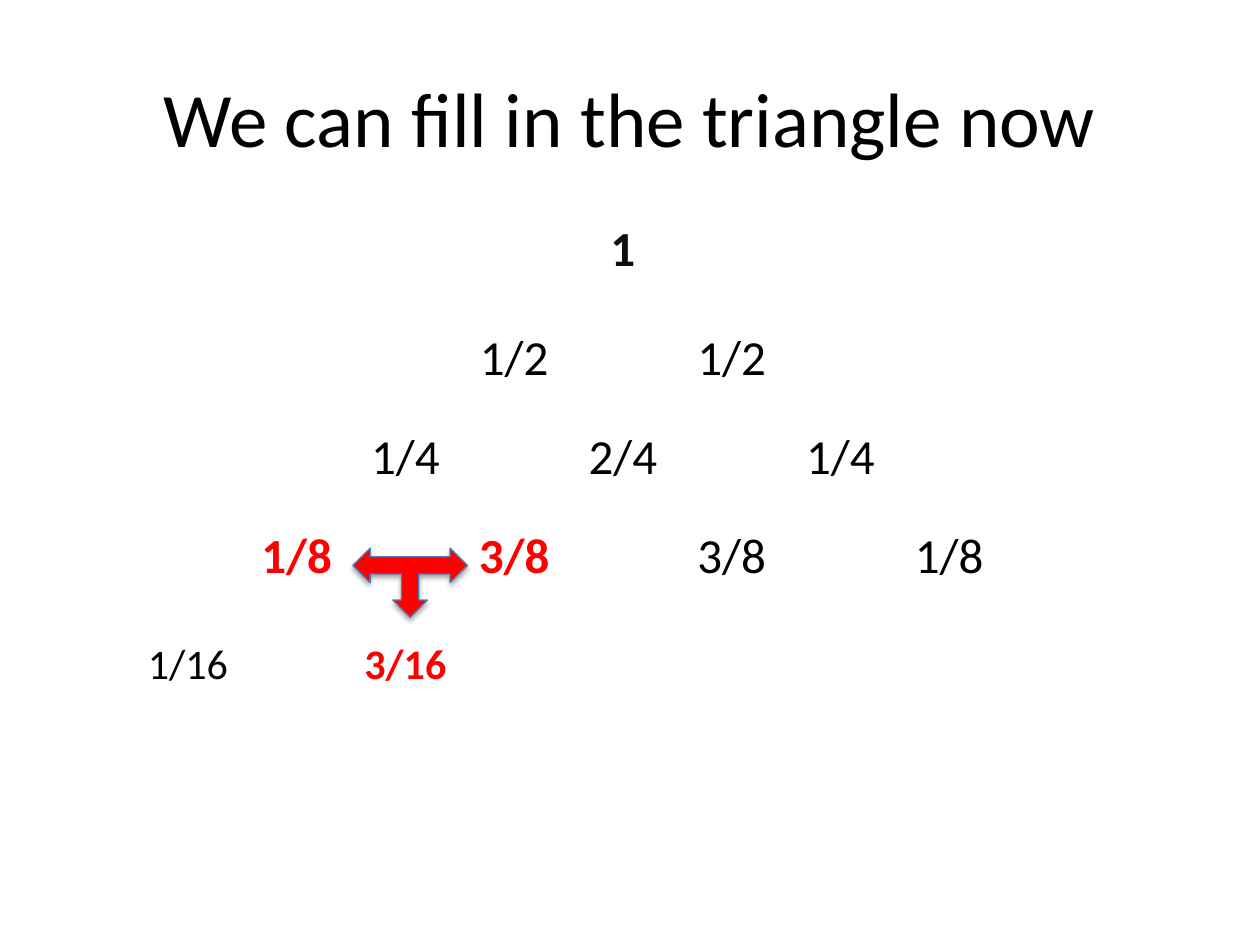
from lxml import etree
from pptx import Presentation
from pptx.dml.color import RGBColor
from pptx.enum.shapes import MSO_SHAPE
from pptx.enum.text import MSO_ANCHOR, PP_ALIGN
from pptx.oxml import parse_xml
from pptx.oxml.ns import nsdecls, qn
from pptx.util import Pt

CENTER = PP_ALIGN.CENTER
MIDDLE = MSO_ANCHOR.MIDDLE
THREE_WAY_ARROW = MSO_SHAPE.LEFT_RIGHT_UP_ARROW

FONT = "Calibri"
WHITE = RGBColor(0xFF, 0xFF, 0xFF)
BLACK = RGBColor(0x00, 0x00, 0x00)
NEAR_BLACK = RGBColor(0x0D, 0x0D, 0x0D)
RED = RGBColor(0xFF, 0x00, 0x00)
BLUE = RGBColor(0x4B, 0x7E, 0xBC)

TRIANGLE = [
    ["1"],
    ["1/2", "1/2"],
    ["1/4", "2/4", "1/4"],
    ["1/8", "3/8", "3/8", "1/8"],
    ["1/16", "3/16"],
]
HIGHLIGHTED = {(3, 0), (3, 1), (4, 1)}  # (row, place in row)
COLUMN_COUNT = 2 * len(TRIANGLE) - 1
COLUMN_WIDTH = 62.16
ROW_HEIGHTS = [62.4, 62.4, 50.4, 62.4, 62.4]


def write(frame, text, size, color, bold=False):
    """Put one centred line of text in a frame."""
    frame.text = text
    para = frame.paragraphs[0]
    para.alignment = CENTER
    font = para.runs[0].font
    font.name, font.size, font.bold = FONT, Pt(size), bold
    font.color.rgb = color


def add_title(page, text):
    title = page.shapes.title
    title.left, title.top = Pt(36), Pt(21.6)
    title.width, title.height = Pt(648), Pt(90)
    title.text_frame.vertical_anchor = MIDDLE
    write(title.text_frame, text, 44, BLACK)


def set_borders(cell, bottom_width):
    """Draw white lines on all four sides of a cell."""
    properties = cell._tc.get_or_add_tcPr()
    sides = {"a:lnL": 1, "a:lnR": 1, "a:lnT": 1, "a:lnB": bottom_width}
    for place, (side, width) in enumerate(sides.items()):
        line = etree.Element(qn(side), w=str(Pt(width)))
        fill = etree.SubElement(line, qn("a:solidFill"))
        etree.SubElement(fill, qn("a:srgbClr"), val=str(WHITE))
        properties.insert(place, line)


def add_triangle(page):
    row_count = len(TRIANGLE)
    table = page.shapes.add_table(
        row_count, COLUMN_COUNT, Pt(76.32), Pt(111.6),
        Pt(COLUMN_WIDTH * COLUMN_COUNT), Pt(sum(ROW_HEIGHTS))).table
    for column in table.columns:
        column.width = Pt(COLUMN_WIDTH)
    for row, height in zip(table.rows, ROW_HEIGHTS):
        row.height = Pt(height)

    # White grid, with a heavier line under the first row
    for row_index, row in enumerate(table.rows):
        for cell in row.cells:
            cell.fill.solid()
            cell.fill.fore_color.rgb = WHITE
            cell.vertical_anchor = MIDDLE
            set_borders(cell, 3 if row_index == 0 else 1)

    # Each row starts one column further left and uses every second column
    for row_index, values in enumerate(TRIANGLE):
        first_column = row_count - 1 - row_index
        size = 24 if row_index == row_count - 1 else 28
        for place, value in enumerate(values):
            marked = (row_index, place) in HIGHLIGHTED
            apex = row_index == 0
            color = RED if marked else NEAR_BLACK if apex else BLACK
            cell = table.cell(row_index, first_column + 2 * place)
            write(cell.text_frame, value, size, color, marked or apex)


def add_sum_arrow(page):
    """Arrow from the two added fractions down to their sum."""
    arrow = page.shapes.add_shape(
        THREE_WAY_ARROW, Pt(201.6), Pt(313.2), Pt(65.52), Pt(39.6))
    arrow.fill.solid()
    arrow.fill.fore_color.rgb = RED
    arrow.line.color.rgb = BLUE
    arrow.line.width = Pt(0.75)
    properties = arrow._element.spPr
    properties.find(qn("a:xfrm")).set("flipV", "1")
    properties.append(parse_xml(
        f'<a:effectLst {nsdecls("a")}>'
        f'<a:outerShdw blurRad="{Pt(3.1)}" dist="{Pt(1.8)}" dir="5400000" '
        'rotWithShape="0"><a:srgbClr val="000000"><a:alpha val="35000"/>'
        '</a:srgbClr></a:outerShdw></a:effectLst>'))


def main():
    deck = Presentation()
    deck.slide_width, deck.slide_height = Pt(720), Pt(540)
    page = deck.slides.add_slide(deck.slide_layouts[5])
    add_title(page, "We can fill in the triangle now")
    add_triangle(page)
    add_sum_arrow(page)
    deck.save("out.pptx")


if __name__ == "__main__":
    main()
